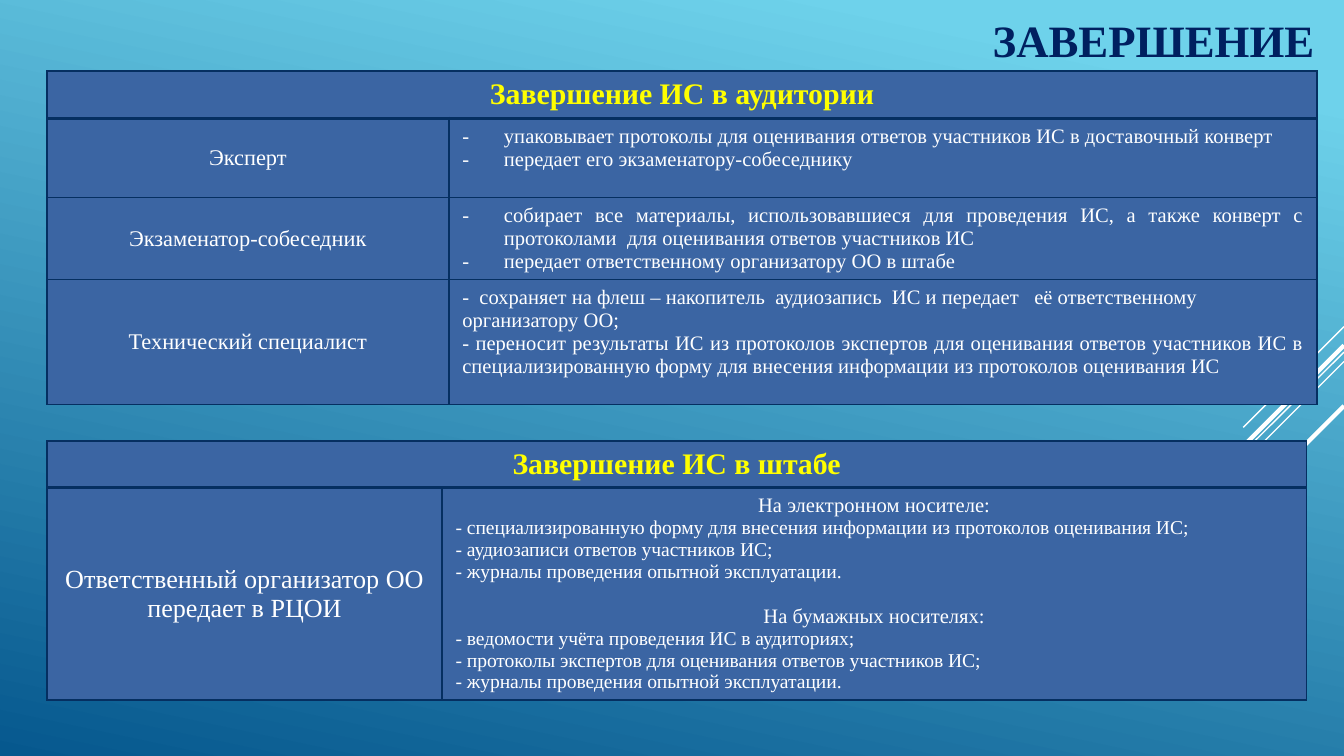
"""Build the slide on how the final interview is closed."""
from typing import NamedTuple

from lxml.etree import SubElement as Sub
from pptx import Presentation
from pptx.dml.color import RGBColor
from pptx.enum.shapes import MSO_CONNECTOR as Conn
from pptx.enum.text import MSO_ANCHOR as Anchor, MSO_AUTO_SIZE as Auto, PP_ALIGN as Align
from pptx.oxml.ns import qn
from pptx.util import Inches, Pt

FONT = "Times New Roman"
NAVY, BLUE, WHITE, YELLOW = "002060", "3B65A3", "FFFFFF", "FFFF00"
EDGE = "052F61"


class Para(NamedTuple):
    text: str
    size: float = 11
    align: Align = Align.JUSTIFY
    dash: bool = False
    hang: float = 0
    gap: float = 0
    color: str = WHITE
    bold: bool = False


class Row(NamedTuple):
    high: float
    role: Para
    tasks: list[Para]


class Grid(NamedTuple):
    top: float
    cols: tuple[float, float]
    head: str
    rows: list[Row]


class Ray(NamedTuple):
    start: tuple[float, float]
    end: tuple[float, float]
    width: float


def rgb(code: str) -> RGBColor:
    """Turn a hex string into a colour."""
    return RGBColor.from_string(code)


def role(text: str, size: float = 12) -> Para:
    """Make a centred label."""
    return Para(text, size, Align.CENTER)


def task(text: str) -> Para:
    """Make a dashed line with a hanging indent."""
    return Para(text, dash=True, hang=0.31)


def item(text: str, align: Align = Align.JUSTIFY) -> Para:
    """Make a small dashed line without an indent."""
    return Para(" " + text, 10.5, align, dash=True)


RAYS = [
    Ray((10, 2.43), (9.25, 3.18), 0.75),
    Ray((10, 2.62), (7.55, 5.06), 0.75),
    Ray((10, 2.69), (8.44, 4.25), 0.75),
    Ray((10, 2.57), (8.57, 4), 2.25),
    Ray((10, 3.02), (8.96, 4.06), 2.25),
]

GRIDS = [
    Grid(0.53, (2.99, 6.46), "Завершение ИС в аудитории", [
        Row(0.59, role("Эксперт"), [
            task("упаковывает протоколы для оценивания ответов участников ИС в доставочный конверт"),
            task("передает его экзаменатору-собеседнику"),
        ]),
        Row(0.61, role("Экзаменатор-собеседник"), [
            task("собирает все материалы, использовавшиеся для проведения ИС, а также конверт с "
                 "протоколами  для оценивания ответов участников ИС"),
            task("передает ответственному организатору ОО в штабе"),
        ]),
        Row(0.93, role("Технический специалист"), [
            Para("-  сохраняет на флеш – накопитель  аудиозапись  ИС и передает   её "
                 "ответственному организатору ОО;", align=Align.LEFT),
            Para("- переносит результаты ИС из протоколов экспертов для оценивания ответов "
                 "участников ИС в специализированную форму для внесения информации из "
                 "протоколов оценивания ИС"),
        ]),
    ]),
    Grid(3.28, (2.94, 6.43), "Завершение ИС в штабе", [
        Row(1.57, role("Ответственный организатор ОО передает в РЦОИ", 14), [
            role("На электронном носителе:", 11),
            item("специализированную форму для внесения информации из протоколов оценивания ИС;"),
            item("аудиозаписи ответов участников ИС;"),
            item("журналы проведения опытной эксплуатации."),
            Para("На бумажных носителях:", 11, Align.CENTER, gap=12),
            Para("- ведомости учёта проведения ИС в аудиториях;", 10.5, Align.LEFT),
            item("протоколы экспертов для оценивания ответов участников ИС;", Align.LEFT),
            item("журналы проведения опытной эксплуатации.", Align.LEFT),
        ]),
    ]),
]


def write(frame, paras: list[Para]) -> None:
    """Fill a text frame and format its paragraphs."""
    frame.text = "\n".join(p.text for p in paras)
    for line, para in zip(frame.paragraphs, paras):
        line.alignment = para.align
        line.space_before = Pt(para.gap)
        for run in line.runs:
            font = run.font
            font.name, font.size, font.bold = FONT, Pt(para.size), para.bold
            font.color.rgb = rgb(para.color)
        if para.dash:
            props = line._p.get_or_add_pPr()
            props.set("marL", str(Inches(para.hang)))
            props.set("indent", str(-Inches(para.hang)))
            Sub(props, qn("a:buFont"), typeface=FONT)
            Sub(props, qn("a:buChar"), char="-")


def style(cell, top: float = 1, base: float = 1) -> None:
    """Give a cell its borders and fill."""
    props = cell._tc.get_or_add_tcPr()
    for side, width in zip("LRTB", (1, 1, top, base)):
        line = Sub(props, qn(f"a:ln{side}"), w=str(Pt(width)))
        Sub(Sub(line, qn("a:solidFill")), qn("a:srgbClr"), val=EDGE)
    cell.fill.solid()
    cell.fill.fore_color.rgb = rgb(BLUE)


def draw_grid(slide, grid: Grid) -> None:
    """Draw a table with a merged heading row."""
    highs = [0.35] + [row.high for row in grid.rows]
    table = slide.shapes.add_table(
        len(highs), 2, Inches(0.35), Inches(grid.top),
        Inches(sum(grid.cols)), Inches(sum(highs))).table
    table.first_row = table.horz_banding = False
    for col, wide in zip(table.columns, grid.cols):
        col.width = Inches(wide)
    for n, high in enumerate(highs):
        table.rows[n].height = Inches(high)
        for cell in table.rows[n].cells:
            style(cell, top=2 if n == 1 else 1, base=2 if n == 0 else 1)
    head = table.cell(0, 0)
    head.merge(table.cell(0, 1))
    head.vertical_anchor = Anchor.MIDDLE
    write(head.text_frame, [Para(grid.head, 16, Align.CENTER, color=YELLOW, bold=True)])
    for n, row in enumerate(grid.rows, 1):
        left, right = table.cell(n, 0), table.cell(n, 1)
        left.vertical_anchor = Anchor.MIDDLE
        write(left.text_frame, [row.role])
        write(right.text_frame, row.tasks)


def draw_ray(slide, ray: Ray) -> None:
    """Draw a white slanted line."""
    ends = [Inches(v) for v in ray.start + ray.end]
    line = slide.shapes.add_connector(Conn.STRAIGHT, *ends)
    line.line.color.rgb = rgb(WHITE)
    line.line.width = Pt(ray.width)
    Sub(line._element.spPr, qn("a:effectLst"))


def draw_back(slide) -> None:
    """Paint the gradient background."""
    fill = slide.background.fill
    fill.gradient()
    fill.gradient_angle = 258
    for stop, (place, code) in zip(fill.gradient_stops, [(0.1, "6ED2EB"), (1, "06588E")]):
        stop.position = place
        stop.color.rgb = rgb(code)


def draw_title(slide) -> None:
    """Place and format the title."""
    title = slide.shapes.title
    title.left, title.top = Inches(3.11), Inches(-0.1)
    title.width, title.height = Inches(6.77), Inches(0.79)
    frame = title.text_frame
    frame.auto_size, frame.word_wrap = Auto.NONE, True
    frame.vertical_anchor = Anchor.MIDDLE
    write(frame, [Para("ЗАВЕРШЕНИЕ", 24, Align.RIGHT, color=NAVY, bold=True)])


def main() -> None:
    """Build and save the slide."""
    deck = Presentation()
    deck.slide_width, deck.slide_height = Inches(10), Inches(10 * 9 / 16)
    slide = deck.slides.add_slide(deck.slide_layouts[5])
    draw_back(slide)
    for ray in RAYS:
        draw_ray(slide, ray)
    draw_title(slide)
    for grid in GRIDS:
        draw_grid(slide, grid)
    deck.save("out.pptx")


if __name__ == "__main__":
    main()
